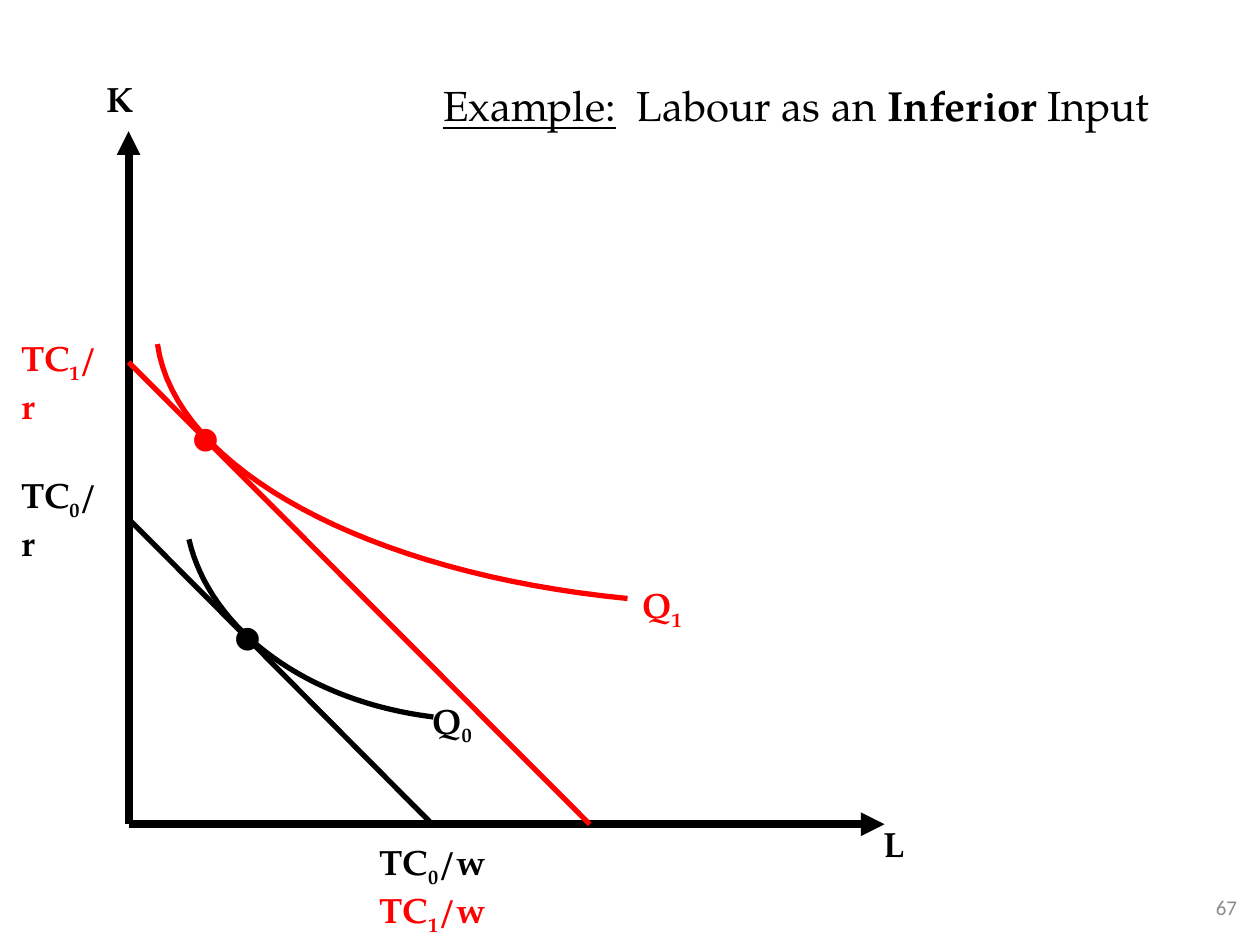
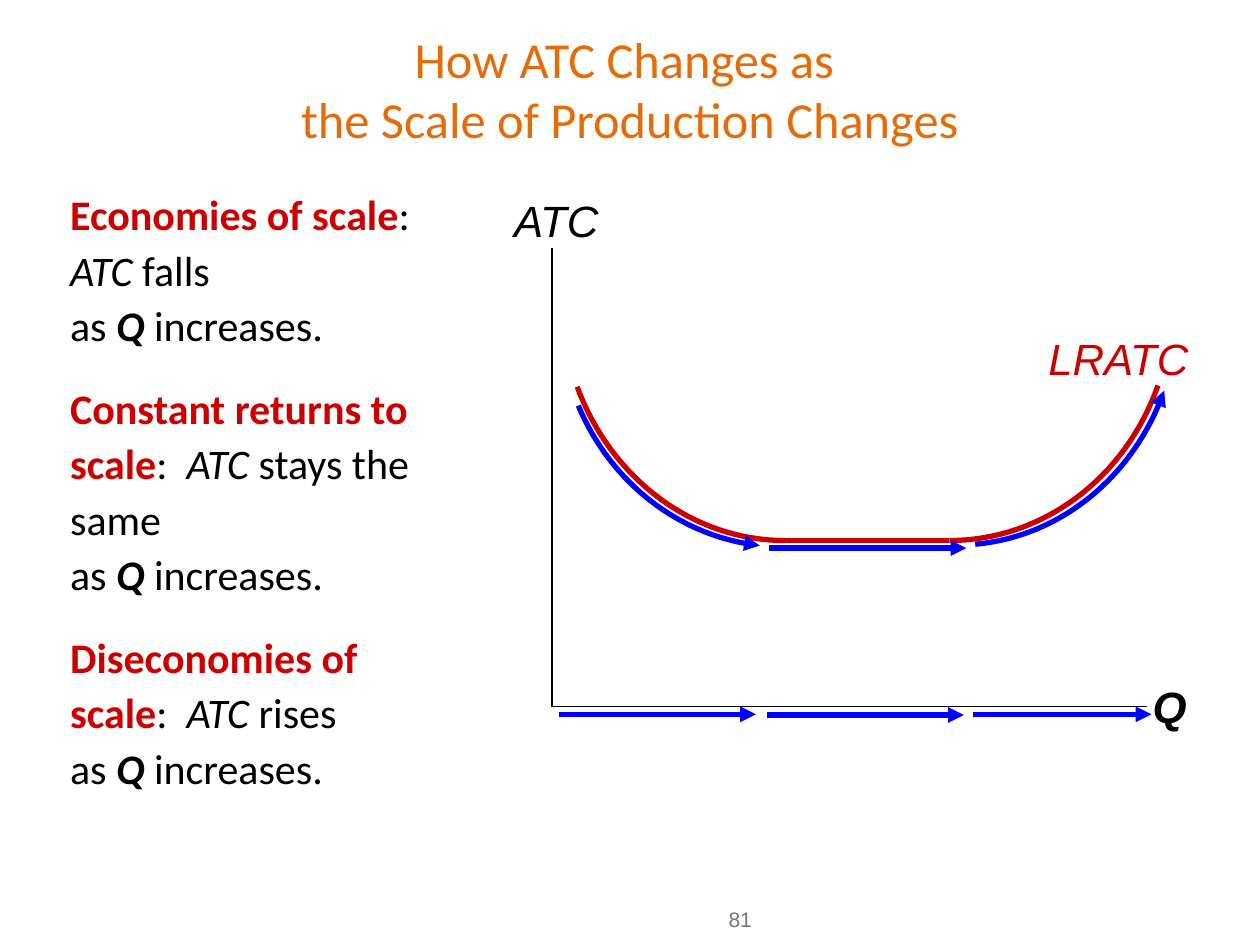
"""Build two economics slides: an inferior input and the long-run average cost curve."""
import lxml.etree
import pptx
import pptx.dml.color
import pptx.enum.shapes
import pptx.enum.text
import pptx.oxml.ns
import pptx.util

Pt = pptx.util.Pt
qn = pptx.oxml.ns.qn
rgb = pptx.dml.color.RGBColor.from_string
BLACK, RED, CRIMSON, BLUE, ORANGE = "000000", "FF0000", "CC0000", "0000FF", "E46C0A"
PAGELLA = "TeX Gyre Pagella"
CURVE_STEPS = 32


def draw(slide, points, color, weight=3, arrow=False):
    """Draw a straight line through two points or a Bezier curve from four."""
    if len(points) == 2:
        (x0, y0), (x1, y1) = points
        stroke = slide.shapes.add_connector(
            pptx.enum.shapes.MSO_CONNECTOR.STRAIGHT, Pt(x0), Pt(y0), Pt(x1), Pt(y1))
    else:
        trace = []
        for step in range(CURVE_STEPS + 1):
            t = step / CURVE_STEPS
            weights = ((1 - t) ** 3, 3 * t * (1 - t) ** 2, 3 * t ** 2 * (1 - t), t ** 3)
            trace.append([Pt(sum(w * p[axis] for w, p in zip(weights, points)))
                          for axis in (0, 1)])
        builder = slide.shapes.build_freeform(*trace[0])
        builder.add_line_segments(trace[1:], close=False)
        stroke = builder.convert_to_shape()
        stroke.fill.background()
    stroke.line.color.rgb = rgb(color)
    stroke.line.width = Pt(weight)
    if arrow:
        lxml.etree.SubElement(stroke.line._get_or_add_ln(), qn("a:tailEnd"), type="triangle")
    lxml.etree.SubElement(stroke._element.spPr, qn("a:effectLst"))


def write(slide, box, paragraphs, font, size, align="LEFT", wrap=True, anchor="TOP",
          title=False, leading=None, gap=0):
    """Write (text, colour, style) runs; style letters are b, i, u and s for subscript."""
    left, top, width, height = map(Pt, box)
    if title:
        holder = slide.shapes.title
        holder.left, holder.top, holder.width, holder.height = left, top, width, height
    else:
        holder = slide.shapes.add_textbox(left, top, width, height)
    frame = holder.text_frame
    frame.auto_size = pptx.enum.text.MSO_AUTO_SIZE.NONE
    frame.word_wrap = wrap
    frame.vertical_anchor = pptx.enum.text.MSO_ANCHOR[anchor]
    for index, runs in enumerate(paragraphs):
        paragraph = frame.add_paragraph() if index else frame.paragraphs[0]
        paragraph.alignment = pptx.enum.text.PP_ALIGN[align]
        if leading:
            paragraph.line_spacing = leading
        if index and gap:
            paragraph.space_before = Pt(gap)
        for text, color, style in runs:
            for number, line in enumerate(text.split("\n")):
                if number:
                    paragraph.add_line_break()
                run = paragraph.add_run()
                run.text = line
                run.font.name = font
                run.font.size = Pt(size)
                run.font.color.rgb = rgb(color)
                run.font.bold = "b" in style
                run.font.italic = "i" in style
                run.font.underline = "u" in style
                if "s" in style:
                    run._r.get_or_add_rPr().set("baseline", "-25000")


deck = pptx.Presentation()
deck.slide_width, deck.slide_height = Pt(720), Pt(540)
title_only = deck.slide_layouts[5]

inferior = deck.slides.add_slide(title_only)
write(inferior, (246, 42, 432, 36),
      [[("Example:", BLACK, "u"), ("  Labour as an ", BLACK, ""),
        ("Inferior", BLACK, "b"), (" Input", BLACK, "")]],
      PAGELLA, 24, title=True)
write(inferior, (660, 504, 54, 29), [[("67", "8C8C8C", "")]], "Calibri", 12, "RIGHT",
      anchor="MIDDLE")

origin = (73.5, 471)
for axis_end in ((505.5, 471), (73.5, 75)):
    draw(inferior, (origin, axis_end), BLACK, 4.5, arrow=True)
for name, x, y in (("L", 498, 466.5), ("K", 54, 40.5)):
    write(inferior, (x, y, 28, 31), [[(name, BLACK, "b")]], PAGELLA, 20, wrap=False)

output_levels = (
    ("0", BLACK, 296.5, 247, (126, 330), (5, 267), (240, 396),
     ((108, 308.2), (120.2, 360.7), (176.4, 401), (247.7, 409.7))),
    ("1", RED, 207, 337, (102, 216), (5, 189), (360, 330),
     ((90, 196.6), (100, 267.8), (210.2, 327.6), (358.6, 342))),
)
labour_costs = []
for level, color, k_cut, l_cut, tangency, cost_at, output_at, isoquant in output_levels:
    draw(inferior, ((origin[0], k_cut), (l_cut, origin[1])), color)
    draw(inferior, isoquant, color)
    write(inferior, (*tangency, 31, 65), [[("•", color, "b")]], "Times New Roman", 48,
          wrap=False)
    cost = [("TC", color, "b"), (level, color, "bs")]
    write(inferior, (*cost_at, 63, 31), [cost + [("/r", color, "b")]], PAGELLA, 20)
    write(inferior, (*output_at, 37.5, 31), [[("Q", color, "b"), (level, color, "bs")]],
          PAGELLA, 20, wrap=False)
    labour_costs.append(cost + [("/w", color, "b")])
write(inferior, (210, 477, 158, 62), labour_costs, PAGELLA, 20)

scale = deck.slides.add_slide(title_only)
write(scale, (0, 20, 720, 61),
      [[("How ATC Changes as \nthe Scale of Production Changes", ORANGE, "")]],
      "Calibri", 28.8, "CENTER", anchor="MIDDLE", title=True)
write(scale, (282, 510.5, 282, 29), [[("81", "777777", "")]], "Arial", 12, "CENTER",
      anchor="MIDDLE")

cases = (("Economies of scale", " falls"),
         ("Constant returns to scale", " stays the same"),
         ("Diseconomies of scale", " rises"))
write(scale, (33, 101.5, 230, 392),
      [[(case, CRIMSON, "b"), (":  ", BLACK, ""), ("ATC", BLACK, "i"),
        (change + "\nas ", BLACK, ""), ("Q", BLACK, "bi"), (" increases.", BLACK, "")]
       for case, change in cases],
      "Calibri", 24, leading=1.1, gap=15.6)

for axis_end in ((315.4, 141.8), (655.2, 403.9)):
    draw(scale, ((315.4, 403.9), axis_end), BLACK, 0.75)

falling_end, rising_start = (448.6, 308.9), (542.5, 308.9)
for stretch in (
    ((329.8, 221), (349.2, 273.6), (396, 308.9), falling_end),
    (falling_end, rising_start),
    (rising_start, (595.4, 308.9), (643, 273.6), (661.7, 220.3)),
):
    draw(scale, stretch, CRIMSON)
for movement in (
    ((330.5, 231.8), (349.2, 276.5), (388.8, 306.7), (434.2, 311.8)),
    ((439.2, 313.2), (552.2, 313.2)),
    ((557.3, 311), (606.2, 306.7), (648, 272.2), (665.3, 223.2)),
    ((319.7, 408.2), (432, 408.2)),
    ((438.5, 408.6), (550.8, 408.6)),
    ((555.8, 408.2), (658, 408.2)),
):
    draw(scale, movement, BLUE, arrow=True)

for name, box, color, style, align in (
    ("LRATC", (592, 186, 101.5, 37), CRIMSON, "i", "LEFT"),
    ("Q", (651.6, 385, 42, 37), BLACK, "bi", "LEFT"),
    ("ATC", (278, 107, 71, 37), BLACK, "i", "RIGHT"),
):
    write(scale, box, [[(name, color, style)]], "Arial", 25, align)

deck.save("out.pptx")
